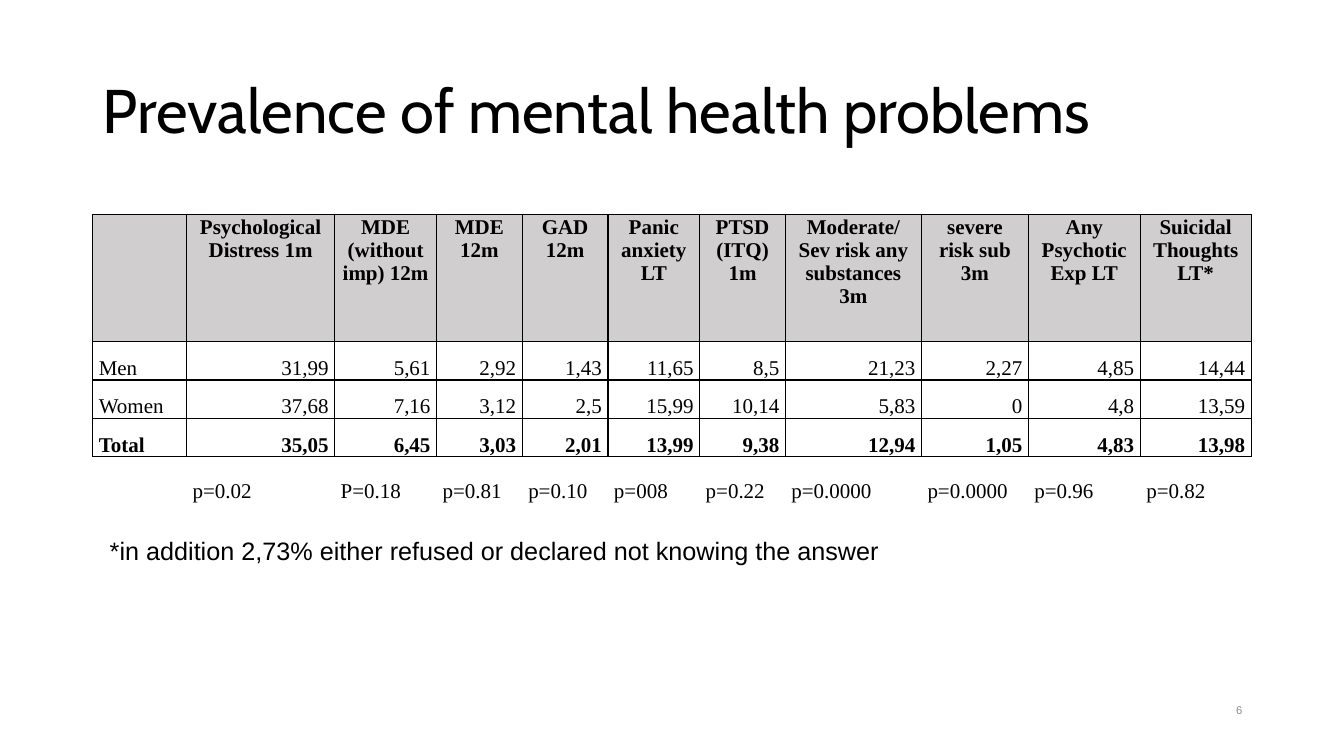
from lxml import etree
from pptx import Presentation
from pptx.dml.color import RGBColor
from pptx.enum.text import MSO_ANCHOR, PP_ALIGN
from pptx.oxml.ns import qn
from pptx.util import Inches, Pt

LEFT, CENTER, RIGHT = PP_ALIGN.LEFT, PP_ALIGN.CENTER, PP_ALIGN.RIGHT
TOP, MIDDLE, BOTTOM = MSO_ANCHOR.TOP, MSO_ANCHOR.MIDDLE, MSO_ANCHOR.BOTTOM

COLORS = {"ink": "000000", "header": "D0CECE", "page_number": "8C8C8C"}
COLUMN_WIDTHS = [0.93, 1.47, 1.01, 0.85, 0.85, 0.91, 0.85, 1.35, 1.06, 1.11, 1.1]
ROW_HEIGHTS = [1.26, 0.38, 0.38, 0.38, 0.46]
PREVALENCE = [
    ["", "Psychological Distress 1m", "MDE\n(without imp) 12m", "MDE 12m",
     "GAD 12m", "Panic anxiety LT", "PTSD (ITQ) 1m",
     "Moderate/ Sev risk any substances 3m", "severe risk sub 3m",
     "Any Psychotic Exp LT", "Suicidal Thoughts LT*"],
    ["Men", "31,99", "5,61", "2,92", "1,43", "11,65", "8,5", "21,23", "2,27",
     "4,85", "14,44"],
    ["Women", "37,68", "7,16", "3,12", "2,5", "15,99", "10,14", "5,83", "0",
     "4,8", "13,59"],
    ["Total", "35,05", "6,45", "3,03", "2,01", "13,99", "9,38", "12,94", "1,05",
     "4,83", "13,98"],
    ["", "p=0.02", "P=0.18", "p=0.81", "p=0.10", "p=008", "p=0.22", "p=0.0000",
     "p=0.0000", "p=0.96", "p=0.82"],
]
HEADER, TOTAL, P_VALUES = 0, 3, 4


class SlideBuilder:
    """Holds the style and the current slide, and adds elements to it."""

    def __init__(self, slide, colors):
        self.slide = slide
        self.colors = colors

    def set_text(self, frame, text, align, color="ink", **font_format):
        frame.text = text
        for paragraph in frame.paragraphs:
            paragraph.alignment = align
            for attribute, value in font_format.items():
                setattr(paragraph.font, attribute, value)
            paragraph.font.color.rgb = RGBColor.from_string(self.colors[color])

    def text(self, text, box, anchor=TOP, align=LEFT, **font_format):
        frame = self.slide.shapes.add_textbox(*map(Inches, box)).text_frame
        frame.word_wrap = True
        frame.vertical_anchor = anchor
        self.set_text(frame, text, align, **font_format)
        return frame

    def borders(self, cell, visible_sides):
        properties = cell._tc.get_or_add_tcPr()
        for side in "LRTB":
            line = etree.SubElement(properties, qn(f"a:ln{side}"), w=str(Pt(1)))
            if side in visible_sides:
                fill = etree.SubElement(line, qn("a:solidFill"))
                etree.SubElement(fill, qn("a:srgbClr"), val=self.colors["ink"])
            else:
                etree.SubElement(line, qn("a:noFill"))

    def cell(self, cell, text, row, column):
        is_header = row == HEADER
        cell_format = {
            "margin_left": Inches(0.06), "margin_right": Inches(0.06),
            "margin_top": Inches(0.01), "margin_bottom": 0,
            "vertical_anchor": TOP if is_header else BOTTOM,
        }
        for attribute, value in cell_format.items():
            setattr(cell, attribute, value)
        self.borders(cell, "T" if row == P_VALUES else "LRTB")
        if is_header:
            align = CENTER
            cell.fill.solid()
            cell.fill.fore_color.rgb = RGBColor.from_string(self.colors["header"])
        else:
            align = LEFT if column == 0 or row == P_VALUES else RIGHT
            cell.fill.background()
        self.set_text(cell.text_frame, text, align, name="Times New Roman",
                      size=Pt(15), bold=row in (HEADER, TOTAL))

    def table(self, rows, left, top, widths, heights):
        table = self.slide.shapes.add_table(
            len(rows), len(widths), Inches(left), Inches(top),
            Inches(sum(widths)), Inches(sum(heights))).table
        table.first_row = table.horz_banding = False
        for column, width in zip(table.columns, widths):
            column.width = Inches(width)
        for row, height in zip(table.rows, heights):
            row.height = Inches(height)
        for row, values in enumerate(rows):
            for column, value in enumerate(values):
                self.cell(table.cell(row, column), value, row, column)


def main():
    presentation = Presentation()
    presentation.slide_width = Inches(13.33)
    presentation.slide_height = Inches(7.5)
    slide = presentation.slides.add_slide(presentation.slide_layouts[6])
    builder = SlideBuilder(slide, COLORS)
    title = builder.text("Prevalence of mental health problems",
                         (0.92, 0.4, 11.5, 1.45), MIDDLE,
                         name="Cabin", size=Pt(44))
    title.paragraphs[0].line_spacing = 0.9
    builder.table(PREVALENCE, 0.92, 2.13, COLUMN_WIDTHS, ROW_HEIGHTS)
    builder.text("*in addition 2,73% either refused or declared not knowing the answer",
                 (0.99, 5.26, 8.67, 0.4), name="Arial", size=Pt(18))
    builder.text("6", (9.42, 6.84, 3, 0.4), MIDDLE, RIGHT,
                 color="page_number", name="Arial", size=Pt(8))
    presentation.save("out.pptx")


if __name__ == "__main__":
    main()
